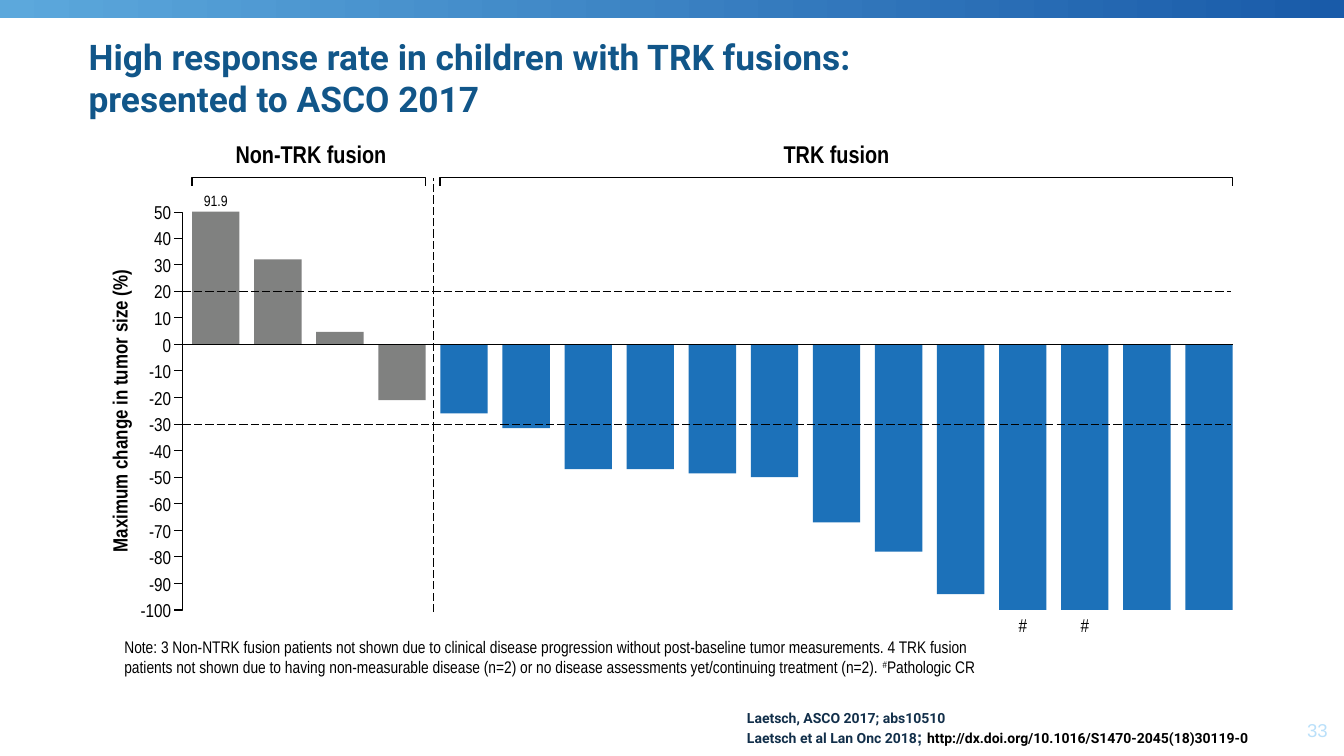
from lxml.etree import SubElement
from pptx import Presentation
from pptx.dml.color import RGBColor
from pptx.enum.dml import MSO_LINE
from pptx.enum.shapes import MSO_CONNECTOR, MSO_SHAPE
from pptx.enum.text import MSO_ANCHOR, PP_ALIGN
from pptx.oxml.ns import qn
from pptx.util import Pt

PX = 9525  # EMU per pixel, 96 pixels to the inch
COLORS = {
    "title": "115689", "band_start": "5CA8DC", "band_end": "195BA9",
    "page": "BAE0FA", "citation": "122F4A", "black": "000000",
    "white": "FFFFFF", "non_trk": "808180", "trk": "1C71B9",
}
RGB = {name: RGBColor.from_string(value) for name, value in COLORS.items()}
NARROW = "Arial Narrow"

prs = Presentation()
prs.slide_width, prs.slide_height = 1280 * PX, 720 * PX
slide = prs.slides.add_slide(prs.slide_layouts[6])
shapes = slide.shapes


def add_text(box, paragraphs, align=PP_ALIGN.LEFT, anchor=MSO_ANCHOR.TOP,
             tight=False, spacing=None):
    """Each run is (text, size, font, color, bold); tight drops the insets."""
    textbox = shapes.add_textbox(*(round(value * PX) for value in box))
    frame = textbox.text_frame
    frame.word_wrap = True
    frame.vertical_anchor = anchor
    if tight:
        frame.margin_left = frame.margin_right = frame.margin_bottom = 0
        frame.margin_top = PX
    for index, runs in enumerate(paragraphs):
        paragraph = frame.add_paragraph() if index else frame.paragraphs[0]
        paragraph.alignment = align
        paragraph.line_spacing = spacing
        for text, size, font, color, bold in runs:
            run = paragraph.add_run()
            run.text = text
            run.font.size = Pt(size)
            run.font.name = font
            run.font.bold = bold
            run.font.color.rgb = RGB[color]
    return textbox


def add_line(x1, y1, x2, y2, dash=None):
    line = shapes.add_connector(
        MSO_CONNECTOR.STRAIGHT, *(round(value * PX) for value in (x1, y1, x2, y2)))
    line.line.color.rgb = RGB["black"]
    line.line.width = Pt(0.75)
    if dash:
        line.line.dash_style = dash
    SubElement(line.element.spPr, qn("a:effectLst"))


# Header band, title and page number
band = shapes.add_shape(MSO_SHAPE.RECTANGLE, 0, 0, 1280 * PX, 17 * PX)
band.shadow.inherit = False
band.line.fill.background()
band.fill.gradient()
band.fill.gradient_angle = 0
for stop, color in zip(band.fill.gradient_stops, ("band_start", "band_end")):
    stop.color.rgb = RGB[color]

title_lines = ("High response rate in children with TRK fusions:",
               "presented to ASCO 2017")
add_text((75, 35, 1205, 77),
         [[(line, 25.2, "Roboto", "title", True)] for line in title_lines],
         anchor=MSO_ANCHOR.MIDDLE)
add_text((1220, 679, 54, 32), [[("33", 13.3, "Arial", "page", False)]],
         PP_ALIGN.RIGHT, MSO_ANCHOR.MIDDLE)

# Footnote and citation
footnote = add_text((109, 602, 855, 48), [[
    (text, 12, NARROW, "black", False) for text in (
        "Note: 3 Non-NTRK fusion patients not shown due to clinical disease "
        "progression without post-baseline tumor measurements. 4 TRK fusion "
        "patients not shown due to having non-measurable disease (n=2) or no "
        "disease assessments yet/continuing treatment (n=2). ",
        "#", "Pathologic CR")]])
footnote.fill.solid()
footnote.fill.fore_color.rgb = RGB["white"]
pathologic_mark = footnote.text_frame.paragraphs[0].runs[1]
pathologic_mark.font._element.set("baseline", "30000")

add_text((702, 671, 568, 45), [
    [("Laetsch, ASCO 2017; abs10510", 10, "Roboto", "citation", True)],
    [("Laetsch et al Lan Onc 2018", 10, "Roboto", "citation", True),
     ("; ", 12, "Arial", "citation", True),
     ("http://dx.doi.org/10.1016/S1470-2045(18)30119-0", 10, "Roboto", "black", True)],
])

# Waterfall scale
ZERO_Y, UNIT = 328, 2.53
TOP_VALUE, BOTTOM_VALUE = 50, -100
AXIS_X, TICK_X = 174, 166
PLOT_LEFT, PLOT_RIGHT, GAP = 183, 1174, 14
top_y = ZERO_Y - TOP_VALUE * UNIT
bottom_y = ZERO_Y - BOTTOM_VALUE * UNIT

non_trk_changes = [91.9, 32, 4.7, -21]
trk_changes = [-26, -31.5, -47, -47, -48.6, -50, -67, -78, -94,
               -100, -100, -100, -100]
pathologic_responses = (9, 10)  # positions within the TRK group
changes = non_trk_changes + trk_changes
bar_width = (PLOT_RIGHT - PLOT_LEFT - GAP * (len(changes) - 1)) / len(changes)
pitch = bar_width + GAP
trk_left = PLOT_LEFT + len(non_trk_changes) * pitch
non_trk_right = trk_left - GAP

# Axis labels and group headings
for value in range(BOTTOM_VALUE, TOP_VALUE + 1, 10):
    add_text((123, ZERO_Y - value * UNIT - 10, 40, 19),
             [[(str(value), 13.3, NARROW, "black", False)]],
             PP_ALIGN.RIGHT, tight=True, spacing=0.96)
for heading, left, right in (("Non-TRK fusion", PLOT_LEFT + 4, non_trk_right),
                             ("TRK fusion", trk_left, PLOT_RIGHT)):
    add_text((left, 134, right - left, 23),
             [[(heading, 17.3, NARROW, "black", True)]],
             PP_ALIGN.CENTER, tight=True, spacing=0.93)
axis_title = add_text(
    (-75, 380, 379, 23),
    [[("Maximum change in tumor size (%)", 14.7, NARROW, "black", True)]],
    PP_ALIGN.CENTER, tight=True, spacing=0.93)
axis_title.rotation = 270

# Bars, cut off at the top of the axis
for index, change in enumerate(changes):
    height = min(change, TOP_VALUE) * UNIT
    bar = shapes.add_shape(
        MSO_SHAPE.RECTANGLE,
        round((PLOT_LEFT + index * pitch) * PX),
        round((ZERO_Y - max(height, 0)) * PX),
        round(bar_width * PX), round(abs(height) * PX))
    bar.shadow.inherit = False
    bar.line.fill.background()
    bar.fill.solid()
    bar.fill.fore_color.rgb = RGB["non_trk" if index < len(non_trk_changes) else "trk"]

# Axis and group brackets
outlines = [(0.79, [(TICK_X, top_y), (AXIS_X, top_y),
                    (AXIS_X, bottom_y), (TICK_X, bottom_y)])]
for left, right in ((PLOT_LEFT, non_trk_right), (trk_left, PLOT_RIGHT)):
    outlines.append((1, [(left, 177), (left, 169), (right, 169), (right, 177)]))
for width, points in outlines:
    builder = shapes.build_freeform(*points[0], scale=PX)
    builder.add_line_segments(points[1:], close=False)
    outline = builder.convert_to_shape()
    outline.shadow.inherit = False
    outline.fill.background()
    outline.line.color.rgb = RGB["black"]
    outline.line.width = Pt(width)

for value in range(BOTTOM_VALUE + 10, TOP_VALUE, 10):
    tick_y = ZERO_Y - value * UNIT
    add_line(TICK_X, tick_y, AXIS_X, tick_y)

# Marks beside single bars
add_text((PLOT_LEFT, 183, bar_width, 16),
         [[("91.9", 10.7, NARROW, "black", False)]],
         PP_ALIGN.CENTER, tight=True, spacing=0.96)
for position in pathologic_responses:
    add_text((trk_left + position * pitch, 585, bar_width, 19),
             [[("#", 13.3, NARROW, "black", False)]],
             PP_ALIGN.CENTER, tight=True, spacing=0.96)

# Response thresholds, group divider and zero line
for threshold in (-30, 20):
    threshold_y = ZERO_Y - threshold * UNIT
    add_line(AXIS_X, threshold_y, 1172, threshold_y, MSO_LINE.LONG_DASH)
divider_x = trk_left - GAP / 2
add_line(divider_x, 583, divider_x, 170, MSO_LINE.LONG_DASH)
add_line(AXIS_X, ZERO_Y, PLOT_RIGHT, ZERO_Y)

prs.save("out.pptx")
